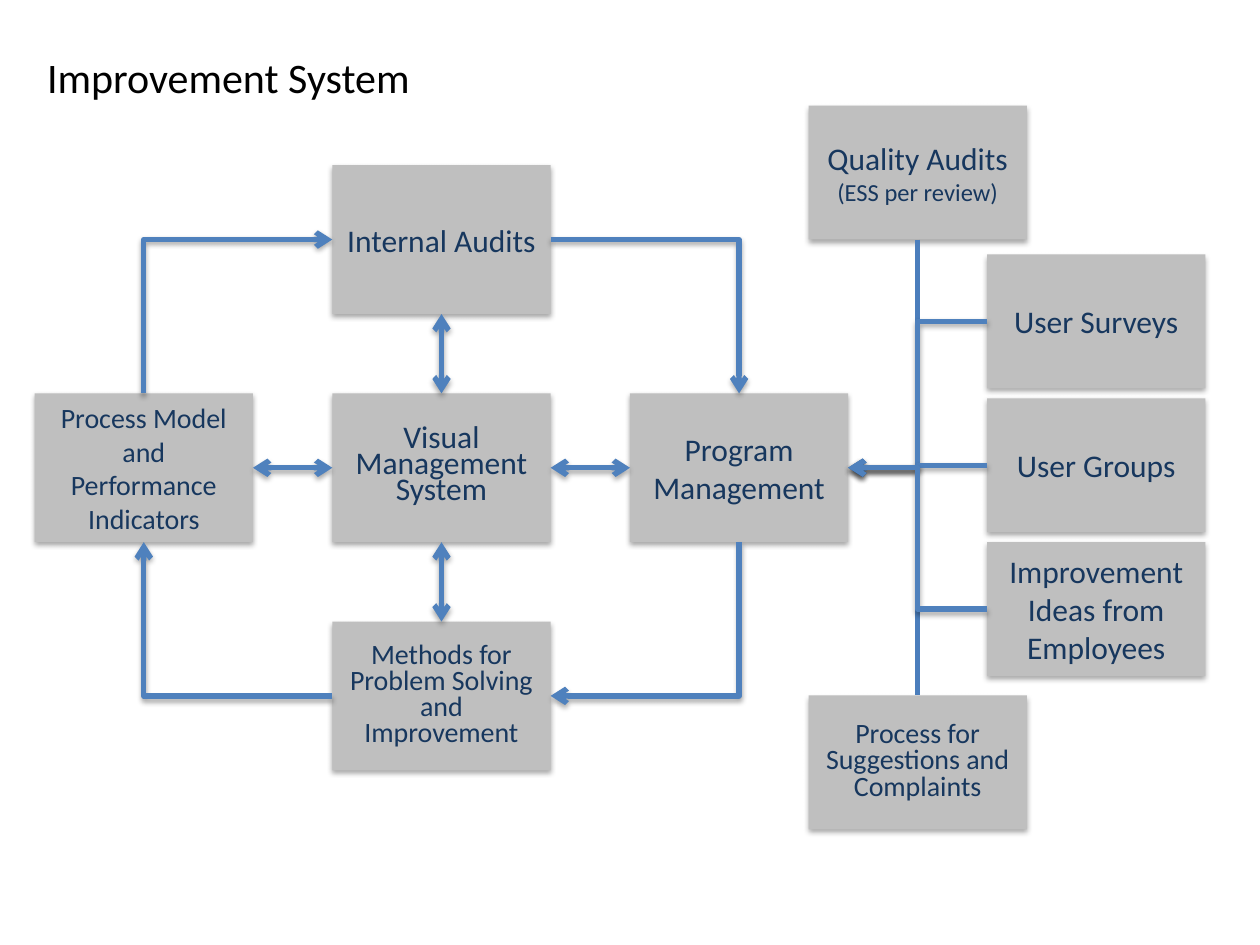
"""Build the Improvement System diagram slide."""
import pptx
import pptx.dml.color
import pptx.enum.shapes
import pptx.enum.text
import pptx.oxml
import pptx.oxml.ns
import pptx.util
from lxml import etree

Cm, Pt = pptx.util.Cm, pptx.util.Pt
RGBColor = pptx.dml.color.RGBColor
qn = pptx.oxml.ns.qn
CONNECTOR = pptx.enum.shapes.MSO_CONNECTOR
GREY = RGBColor(0xBF, 0xBF, 0xBF)
NAVY = RGBColor(0x17, 0x37, 0x5E)
BLUE = RGBColor(0x4F, 0x81, 0xBD)
TRUNK_BLUE = RGBColor(0x4B, 0x7E, 0xBC)
BLACK = RGBColor(0, 0, 0)
TOP, LEFT, BOTTOM, RIGHT = range(4)
SHADOW = (
    f'<a:effectLst {pptx.oxml.ns.nsdecls("a")}>'
    '<a:outerShdw blurRad="40000" dist="23000" dir="5400000" rotWithShape="0">'
    '<a:srgbClr val="000000"><a:alpha val="35000"/></a:srgbClr>'
    '</a:outerShdw></a:effectLst>'
)

deck = pptx.Presentation()
deck.slide_width, deck.slide_height = Cm(25.4), Cm(19.05)
slide = deck.slides.add_slide(deck.slide_layouts[6])


def add_box(left, top, height, text, size, spacing=None):
    box = slide.shapes.add_shape(
        pptx.enum.shapes.MSO_SHAPE.RECTANGLE, Cm(left), Cm(top), Cm(4.4), Cm(height))
    box.fill.solid()
    box.fill.fore_color.rgb = GREY
    box.line.fill.background()
    box._element.spPr.append(pptx.oxml.parse_xml(SHADOW))
    frame = box.text_frame
    frame.word_wrap = True
    frame.vertical_anchor = pptx.enum.text.MSO_ANCHOR.MIDDLE
    frame.text = text
    for paragraph in frame.paragraphs:
        paragraph.alignment = pptx.enum.text.PP_ALIGN.CENTER
        paragraph.line_spacing = spacing
        paragraph.font.name = "Calibri"
        paragraph.font.size = Pt(size)
        paragraph.font.color.rgb = NAVY
    return box


def add_link(kind, start, start_side, end, end_side, arrows=(), color=BLUE):
    link = slide.shapes.add_connector(kind, 0, 0, 0, 0)
    link.begin_connect(start, start_side)
    link.end_connect(end, end_side)
    link.line.color.rgb = color
    link.line.width = Pt(3)
    for arrow in arrows:
        etree.SubElement(link.line._get_or_add_ln(), qn(f"a:{arrow}"), type="arrow")
    if arrows:
        link._element.spPr.append(pptx.oxml.parse_xml(SHADOW))
    else:
        etree.SubElement(link._element.spPr, qn("a:effectLst"))
    return link


title = slide.shapes.add_textbox(Cm(0.7), Cm(0.91), Cm(9.6), Cm(1.28))
title.text_frame.word_wrap = True
heading = title.text_frame.paragraphs[0]
heading.text = "Improvement System"
heading.font.name = "Calibri"
heading.font.size = Pt(24)
heading.font.color.rgb = BLACK

cycle = {}
for name, column, row, text, size, spacing in (
    ("indicators", 0, 1, "Process Model and Performance Indicators", 16, None),
    ("audits", 1, 0, "Internal Audits", 18, None),
    ("visual", 1, 1, "Visual Management System", 18, Pt(15)),
    ("methods", 1, 2, "Methods for Problem Solving and Improvement", 16, Pt(15)),
    ("program", 2, 1, "Program Management", 18, None),
):
    cycle[name] = add_box(0.7 + 6 * column, 3.33 + 4.6 * row, 3, text, size, spacing)

quality = add_box(16.3, 2.13, 2.7, "Quality Audits\n(ESS per review)", 18)
quality.text_frame.paragraphs[1].font.size = Pt(14)
complaints = add_box(16.3, 14.02, 2.7, "Process for Suggestions and Complaints", 16, Pt(15))

for neighbour, near_side, far_side in (
    ("audits", TOP, BOTTOM),
    ("indicators", LEFT, RIGHT),
    ("methods", BOTTOM, TOP),
    ("program", RIGHT, LEFT),
):
    add_link(CONNECTOR.STRAIGHT, cycle["visual"], near_side,
             cycle[neighbour], far_side, ("headEnd", "tailEnd"))

for start, start_side, end, end_side, arrow in (
    ("audits", RIGHT, "program", TOP, "tailEnd"),
    ("methods", RIGHT, "program", BOTTOM, "headEnd"),
    ("methods", LEFT, "indicators", BOTTOM, "tailEnd"),
    ("audits", LEFT, "indicators", TOP, "headEnd"),
):
    corner = add_link(CONNECTOR.ELBOW, cycle[start], start_side,
                      cycle[end], end_side, (arrow,))
    corner._element.spPr.find(qn("a:prstGeom")).set("prst", "bentConnector2")

add_link(CONNECTOR.STRAIGHT, quality, BOTTOM, complaints, TOP, color=TRUNK_BLUE)

for index, text in enumerate(
        ("User Surveys", "User Groups", "Improvement Ideas from Employees")):
    feedback = add_box(19.9, 5.13 + 2.9 * index, 2.7, text, 18)
    add_link(CONNECTOR.ELBOW, feedback, LEFT, cycle["program"], RIGHT, ("tailEnd",))

deck.save("out.pptx")
